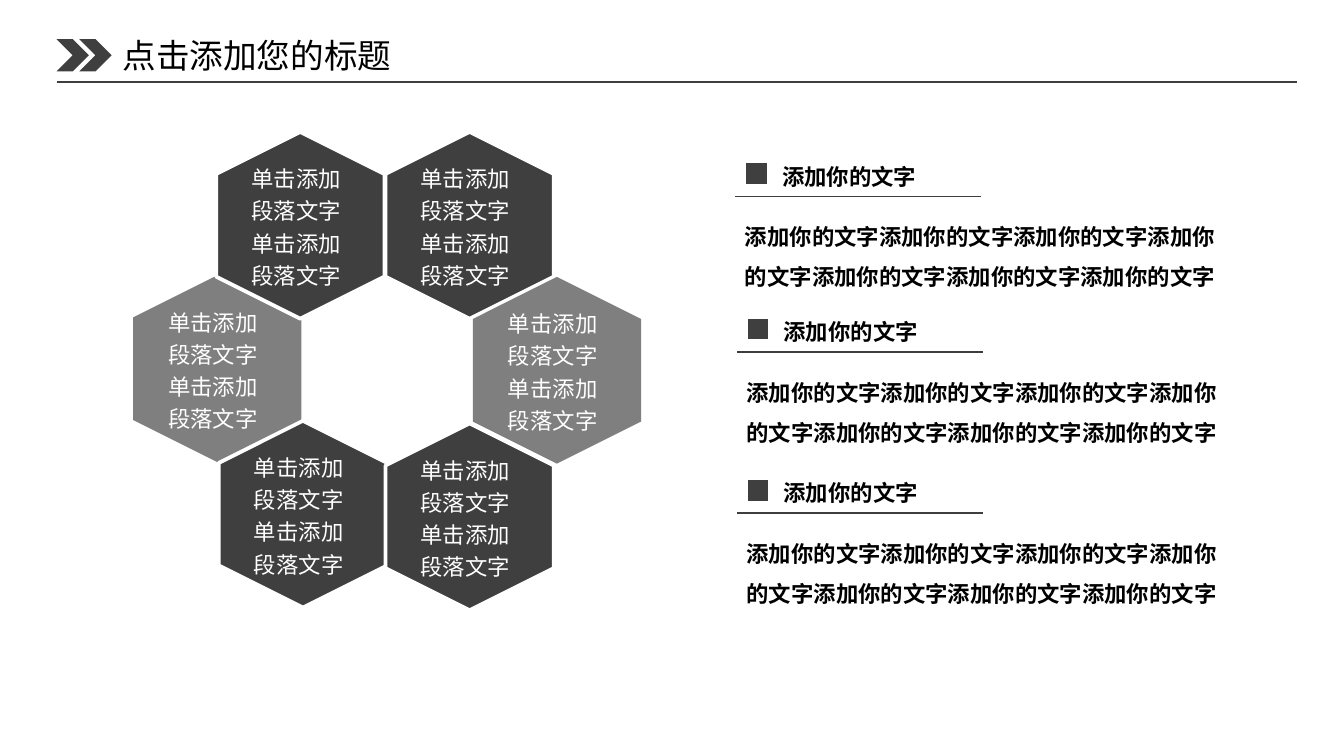
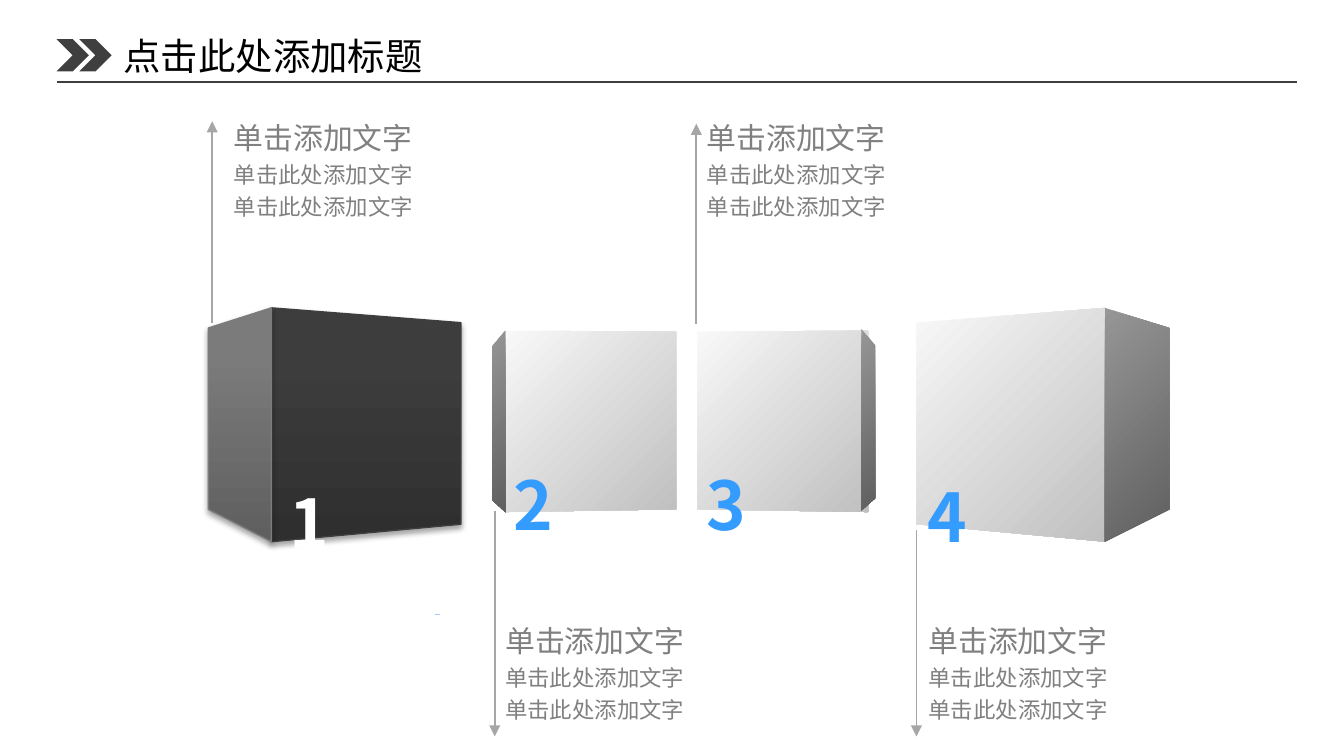
from lxml.etree import SubElement
from pptx import Presentation
from pptx.dml.color import RGBColor
from pptx.enum.shapes import MSO_CONNECTOR as Link, MSO_SHAPE as Preset
from pptx.enum.text import MSO_ANCHOR as Anchor, MSO_AUTO_SIZE as Fit, PP_ALIGN as Align
from pptx.oxml.ns import qn
from pptx.util import Cm, Pt

FONT = "Noto Sans CJK SC"
BLACK = RGBColor(0x00, 0x00, 0x00)
WHITE = RGBColor(0xFF, 0xFF, 0xFF)
CHARCOAL = RGBColor(0x3F, 0x3F, 0x3F)
RULE = RGBColor(0x3E, 0x3E, 0x3E)
MID_GREY = RGBColor(0x7F, 0x7F, 0x7F)
CAPTION_GREY = RGBColor(0x80, 0x80, 0x80)
ARROW_GREY = RGBColor(0xA6, 0xA6, 0xA6)
NUMBER_BLUE = RGBColor(0x34, 0x9B, 0xFF)
DASH_BLUE = RGBColor(0xA8, 0xC8, 0xFF)
SIDE_EDGE = RGBColor(0x7C, 0x7C, 0x7C)

# Gradients: first colour, last colour, clockwise angle, start of the change
LIGHT_FRONT = (RGBColor(0xF8, 0xF8, 0xF8), RGBColor(0xC0, 0xC0, 0xC0), 45, 0)
LIGHT_SIDE = (RGBColor(0x96, 0x96, 0x96), RGBColor(0x5F, 0x5F, 0x5F), 45, 0)
DARK_FRONT = (RGBColor(0x3D, 0x3D, 0x3D), RGBColor(0x2F, 0x2F, 0x2F), 90, 0.2)
DARK_SIDE = (RGBColor(0x7B, 0x7B, 0x7B), RGBColor(0x5F, 0x5F, 0x5F), 90, 0.2)


def write(paragraph, text, size=12, color=BLACK, bold=False, spacing=None, align=Align.LEFT):
    """Put formatted text into a paragraph."""
    paragraph.alignment = align
    if spacing:
        paragraph.line_spacing = spacing
    run = paragraph.add_run()
    run.text = text
    run.font.size = Pt(size)
    run.font.bold = bold
    run.font.color.rgb = color
    run.font.name = FONT
    SubElement(run._r.get_or_add_rPr(), qn("a:ea"), typeface=FONT)


class Deck:
    def __init__(self):
        self.prs = Presentation()
        self.prs.slide_width, self.prs.slide_height = Cm(25.4), Cm(14.29)
        self.slide = None

    def new_slide(self, title, box, **style):
        """Start a slide with the shared chevrons, rule and title."""
        self.slide = self.prs.slides.add_slide(self.prs.slide_layouts[5])
        for x in (1.07, 1.5):
            self.shape(Preset.CHEVRON, x, 0.74, 0.61, 0.61, CHARCOAL)
        self.line((1.07, 1.55), (24.51, 1.55), RULE)
        heading = self.slide.shapes.title
        heading.left, heading.top, heading.width, heading.height = map(Cm, box)
        frame = heading.text_frame
        frame.auto_size = Fit.NONE
        frame.vertical_anchor = Anchor.MIDDLE
        write(frame.paragraphs[0], title, **style)

    def outline(self, shape, color, width):
        if color is None:
            shape.line.fill.background()
        else:
            shape.line.color.rgb = color
            shape.line.width = Pt(width)

    def shape(self, preset, x, y, w, h, fill, edge=None, rotation=0):
        shape = self.slide.shapes.add_shape(preset, Cm(x), Cm(y), Cm(w), Cm(h))
        shape.shadow.inherit = False
        shape.rotation = rotation
        shape.fill.solid()
        shape.fill.fore_color.rgb = fill
        self.outline(shape, edge, 2)

    def line(self, start, end, color, width=0.75, arrow=False):
        line = self.slide.shapes.add_connector(Link.STRAIGHT, *map(Cm, (*start, *end)))
        line.line.color.rgb = color
        line.line.width = Pt(width)
        properties = line._element.spPr
        if arrow:
            SubElement(properties.find(qn("a:ln")), qn("a:tailEnd"), type="triangle")
        SubElement(properties, qn("a:effectLst"))

    def text(self, x, y, w, h, paragraphs, wrap=True, grow=True, **style):
        """Add a text box; paragraphs are (text, size) pairs."""
        frame = self.slide.shapes.add_textbox(Cm(x), Cm(y), Cm(w), Cm(h)).text_frame
        frame.word_wrap = wrap
        frame.auto_size = Fit.SHAPE_TO_FIT_TEXT if grow else Fit.NONE
        for i, (words, size) in enumerate(paragraphs):
            paragraph = frame.add_paragraph() if i else frame.paragraphs[0]
            write(paragraph, words, size=size, **style)

    def face(self, near, far, gradient, edge=None, shadow=False):
        """Add a cube face between two upright edges, each (x, top, bottom)."""
        (x1, top1, bottom1), (x2, top2, bottom2) = near, far
        builder = self.slide.shapes.build_freeform(Cm(x1), Cm(top1), scale=1.0)
        corners = ((x1, bottom1), (x2, bottom2), (x2, top2))
        builder.add_line_segments([(Cm(x), Cm(y)) for x, y in corners], close=True)
        face = builder.convert_to_shape()
        first, last, angle, start = gradient
        face.fill.gradient()
        face.fill.gradient_angle = 360 - angle
        for stop, color, position in zip(face.fill.gradient_stops, (first, last), (start, 1)):
            stop.color.rgb = color
            stop.position = position
        self.outline(face, edge, 0.75)
        face.shadow.inherit = False
        if shadow:
            effects = face._element.spPr.find(qn("a:effectLst"))
            outer = SubElement(effects, qn("a:outerShdw"), blurRad=str(Pt(3.1)),
                               dist=str(Pt(1.8)), dir="5400000", rotWithShape="0")
            black = SubElement(outer, qn("a:srgbClr"), val="000000")
            SubElement(black, qn("a:alpha"), val="35000")


def hexagon_slide(deck):
    deck.new_slide("点击添加您的标题", (2.06, 0.53, 5.7, 1.02), size=18)

    # Ring of hexagons
    ring = [(2.34, 5.38, MID_GREY, None), (3.91, 2.67, CHARCOAL, WHITE),
            (7.11, 2.67, CHARCOAL, WHITE), (8.76, 5.41, MID_GREY, None),
            (3.96, 8.13, CHARCOAL, WHITE), (7.11, 8.18, CHARCOAL, WHITE)]
    for x, y, fill, edge in ring:
        deck.shape(Preset.HEXAGON, x, y, 3.53, 3.18, fill, edge, rotation=90)
        deck.text(x + 0.59, y + 0.23, 2.6, 2.72, [("单击添加段落文字" * 2, 12)],
                  color=WHITE, spacing=1.2)

    # Sections with marker, heading, rule and body
    for x, y in ((14.07, 3.05), (14.1, 5.99), (14.1, 9.04)):
        deck.shape(Preset.RECTANGLE, x, y, 0.46, 0.46, CHARCOAL, WHITE)
        deck.line((x - 0.17, y + 0.66), (x + 4.47, y + 0.66), RULE)
        deck.text(x + 0.46, y - 0.1, 3.07, 0.76, [("添加你的文字", 12)], wrap=False, bold=True)
        deck.text(x - 0.24, y + 0.79, 9.65, 1.8, [("添加你的文字" * 7, 12)],
                  bold=True, spacing=1.5)


def cube_slide(deck):
    deck.new_slide("点击此处添加标题", (2.08, 0.46, 6.43, 1.3), size=20, spacing=0.9)

    # Light cubes: near and far edge of the front, then of the side
    light_cubes = [
        ((9.55, 6.25, 9.68), (12.78, 6.27, 9.63), (9.55, 6.25, 9.68), (9.3, 6.55, 9.45)),
        ((16.41, 6.25, 9.68), (13.18, 6.27, 9.63), (16.28, 6.22, 9.65), (16.54, 6.53, 9.42)),
        ((20.88, 5.82, 10.24), (17.32, 6.1, 9.91), (20.88, 5.82, 10.24), (22.1, 6.2, 9.63)),
    ]
    for front_near, front_far, side_near, side_far in light_cubes:
        deck.face(front_near, front_far, LIGHT_FRONT)
        deck.face(side_near, side_far, LIGHT_SIDE)

    # Dark cube
    corner = (5.13, 5.82, 10.24)
    deck.face(corner, (8.71, 6.1, 9.91), DARK_FRONT, RULE, shadow=True)
    deck.face(corner, (3.94, 6.2, 9.63), DARK_SIDE, SIDE_EDGE, shadow=True)
    deck.line((8.23, 11.61), (8.31, 11.61), DASH_BLUE)

    # Captions
    caption = [("单击添加文字", 16), ("单击此处添加文字", 12), ("单击此处添加文字", 12)]
    for x, y in ((4.17, 2.01), (9.3, 11.51), (13.11, 2.01), (17.3, 11.51)):
        deck.text(x, y, 6.07, 2.11, caption, color=CAPTION_GREY, spacing=1.2)

    # Arrows from cube to caption
    arrows = [(4.01, 6.1, 2.29, 0.75), (9.35, 9.65, 13.92, 1),
              (13.16, 6.12, 2.34, 1), (17.32, 10.01, 13.92, 1)]
    for x, start, tip, width in arrows:
        deck.line((x, start), (x, tip), ARROW_GREY, width, arrow=True)

    # Cube numbers
    places = [(5.56, 8.97, WHITE), (9.8, 8.64, NUMBER_BLUE),
              (13.44, 8.64, NUMBER_BLUE), (17.63, 8.86, NUMBER_BLUE)]
    for number, (x, y, color) in enumerate(places, 1):
        deck.text(x, y, 0.56, 0.89, [(str(number), 36)], wrap=False, grow=False,
                  color=color, bold=True, align=Align.CENTER)


def main():
    deck = Deck()
    hexagon_slide(deck)
    cube_slide(deck)
    deck.prs.save("out.pptx")


if __name__ == "__main__":
    main()
